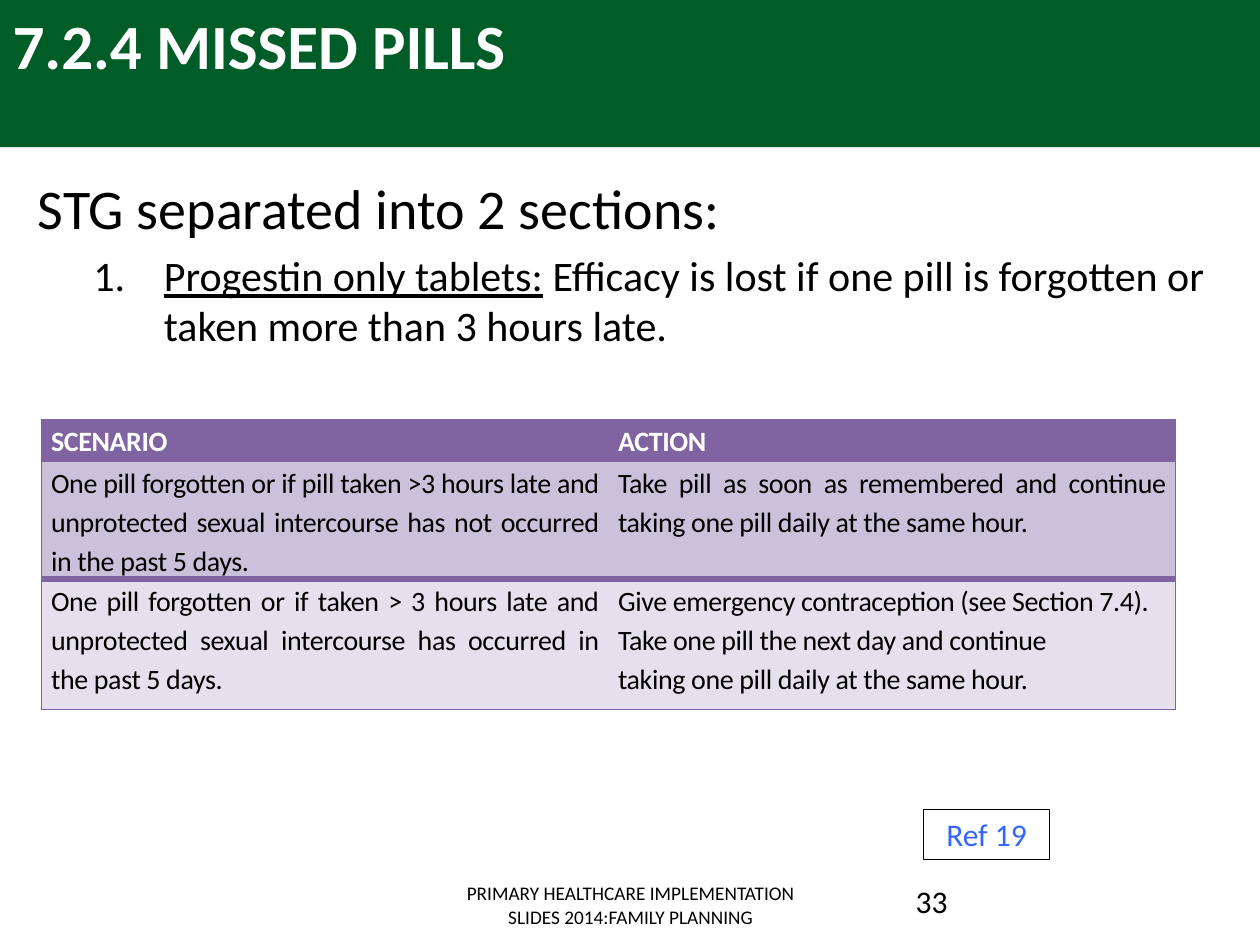
from lxml.etree import SubElement
from pptx import Presentation
from pptx.dml.color import RGBColor
from pptx.enum.shapes import MSO_SHAPE
from pptx.enum.text import MSO_ANCHOR, MSO_AUTO_SIZE, PP_ALIGN
from pptx.oxml.ns import qn
from pptx.util import Cm, Pt

COLOURS = {
    "banner": "005D28", "white": "FFFFFF", "black": "000000", "link": "3366FF",
    "purple": "8064A2", "mid": "CCC1DA", "pale": "E6E0EC",
}
TABLE_ROWS = [
    ("purple", 0.84, "SCENARIO", "ACTION"),
    ("mid", 1.73,
     "One pill forgotten or if pill taken >3 hours late and unprotected sexual "
     "intercourse has not occurred in the past 5 days.",
     "Take pill as soon as remembered and continue taking one pill daily at the same hour."),
    ("pale", 2.62,
     "One pill forgotten or if taken > 3 hours late and unprotected sexual "
     "intercourse has occurred in the past 5 days.",
     "Give emergency contraception (see Section 7.4).\n"
     "Take one pill the next day and continue\n"
     "taking one pill daily at the same hour."),
]


def colour(name):
    return RGBColor.from_string(COLOURS[name])


def set_all(target, values):
    for name, value in values.items():
        setattr(target, name, value)


class SlideBuilder:
    font_name = "Calibri"

    def __init__(self, slide):
        self.slide = slide

    def place(self, shape, left, top, width, height):
        set_all(shape, {"left": Cm(left), "top": Cm(top),
                        "width": Cm(width), "height": Cm(height)})

    def run(self, paragraph, text, size, ink="black", **formats):
        run = paragraph.add_run()
        run.text = text
        set_all(run.font, {"name": self.font_name, "size": Pt(size), **formats})
        run.font.color.rgb = colour(ink)
        return run

    def frame(self, shape, anchor=MSO_ANCHOR.TOP):
        set_all(shape.text_frame, {"word_wrap": True, "vertical_anchor": anchor,
                                   "auto_size": MSO_AUTO_SIZE.NONE})
        return shape.text_frame

    def rectangle(self, box, fill=None, line=None):
        shape = self.slide.shapes.add_shape(MSO_SHAPE.RECTANGLE, *map(Cm, box))
        shape.shadow.inherit = False
        if fill:
            shape.fill.solid()
            shape.fill.fore_color.rgb = colour(fill)
        else:
            shape.fill.background()
        if line:
            shape.line.color.rgb = colour(line)
            shape.line.width = Pt(0.25)
        else:
            shape.line.fill.background()
        return shape

    def banner(self, box):
        shape = self.rectangle(box, fill="banner")
        # The banner lies behind the title
        self.slide.shapes._spTree.insert(2, shape._element)

    def title(self, text, box):
        shape = self.slide.shapes.title
        self.place(shape, *box)
        paragraph = self.frame(shape).paragraphs[0]
        paragraph.alignment = PP_ALIGN.LEFT
        self.run(paragraph, text, 36, "white", bold=True)

    def body(self, heading, term, detail, box):
        shape = self.slide.placeholders[1]
        self.place(shape, *box)
        frame = self.frame(shape)
        first = frame.paragraphs[0]
        self.indent(first, 0, 0, "a:buNone")
        self.run(first, heading, 32)
        item = frame.add_paragraph()
        item.level = 1
        self.indent(item, 2.54, -1.42, "a:buAutoNum", type="arabicPeriod")
        self.run(item, term, 24, underline=True)
        self.run(item, detail, 24)

    def indent(self, paragraph, margin, hanging, bullet, **attributes):
        properties = paragraph._p.get_or_add_pPr()
        properties.set("marL", str(Cm(margin)))
        properties.set("indent", str(Cm(hanging)))
        SubElement(properties, qn(bullet), attributes)

    def label(self, text, size, box, align=PP_ALIGN.LEFT):
        shape = self.slide.shapes.add_textbox(*map(Cm, box))
        paragraph = self.frame(shape).paragraphs[0]
        paragraph.alignment = align
        self.run(paragraph, text, size)

    def reference(self, text, box):
        shape = self.rectangle(box, line="black")
        paragraph = self.frame(shape, MSO_ANCHOR.MIDDLE).paragraphs[0]
        paragraph.alignment = PP_ALIGN.CENTER
        self.run(paragraph, text, 18, "link")

    def border(self, cell, side, width):
        properties = cell._tc.get_or_add_tcPr()
        line = SubElement(properties, qn(f"a:{side}"), w=str(Pt(width)))
        if width:
            fill = SubElement(line, qn("a:solidFill"))
            SubElement(fill, qn("a:srgbClr"), val=COLOURS["purple"])
        else:
            SubElement(line, qn("a:noFill"))

    def table(self, rows, box):
        table = self.slide.shapes.add_table(len(rows), 2, *map(Cm, box)).table
        for row, (fill, height, *texts) in enumerate(rows):
            table.rows[row].height = Cm(height)
            for column, text in enumerate(texts):
                cell = table.cell(row, column)
                set_all(cell, {"margin_left": Cm(0.19), "margin_right": Cm(0.19),
                               "margin_top": 0, "margin_bottom": 0})
                self.cell_text(cell, text, header=row == 0)
                # Outer frame, with a heavy rule between the two scenarios
                widths = {"lnL": 1 - column, "lnR": column,
                          "lnT": 4 if row == 2 else 1, "lnB": 4 if row == 1 else 1}
                for side, width in widths.items():
                    self.border(cell, side, width)
                cell.fill.solid()
                cell.fill.fore_color.rgb = colour(fill)

    def cell_text(self, cell, text, header):
        cell.text = text
        for paragraph in cell.text_frame.paragraphs:
            line = paragraph.text
            paragraph.clear()
            set_all(paragraph, {"alignment": PP_ALIGN.JUSTIFY, "line_spacing": 1.15})
            run = self.run(paragraph, line, 16, "white" if header else "black", bold=header)
            run.font._element.set("spc", "-20")


def main():
    presentation = Presentation()
    presentation.slide_width, presentation.slide_height = Cm(25.4), Cm(19.05)
    builder = SlideBuilder(presentation.slides.add_slide(presentation.slide_layouts[1]))

    # Heading
    builder.banner((0, 0, 25.4, 2.97))
    builder.title("7.2.4 MISSED PILLS", (0, 0, 22.86, 3.18))

    # Introduction
    builder.body("STG separated into 2 sections:", "Progestin only tablets:",
                 " Efficacy is lost if one pill is forgotten or taken more than 3 hours late.",
                 (0.51, 3.38, 24.41, 14.1))

    # Scenarios and actions
    builder.table(TABLE_ROWS, (0.84, 8.46, 22.86, 5.19))

    # Reference and footer
    builder.reference("Ref 19", (18.62, 16.31, 2.54, 1.02))
    builder.label("PRIMARY HEALTHCARE IMPLEMENTATION SLIDES 2014:FAMILY PLANNING", 11,
                  (8.69, 17.65, 8.05, 1.02), PP_ALIGN.CENTER)
    builder.label("33", 18, (18.21, 17.65, 5.92, 1.02))

    presentation.save("out.pptx")


if __name__ == "__main__":
    main()
